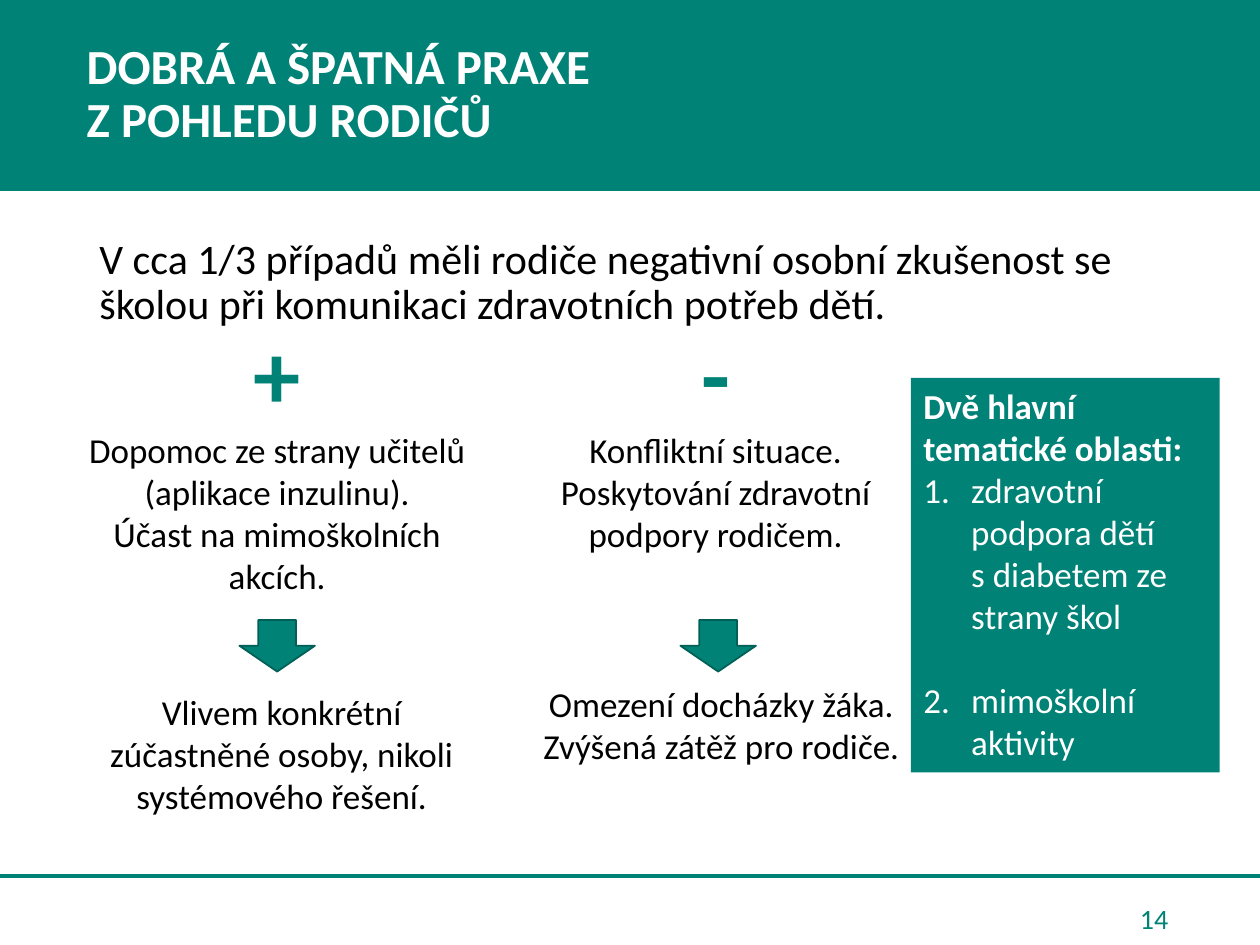
from lxml import etree
from pptx import Presentation
from pptx.dml.color import RGBColor
from pptx.enum.shapes import MSO_CONNECTOR, MSO_SHAPE
from pptx.enum.text import MSO_ANCHOR, PP_ALIGN
from pptx.oxml.ns import qn
from pptx.util import Inches, Pt

TEAL = RGBColor(0x00, 0x82, 0x76)
DARK_TEAL = RGBColor(0x00, 0x60, 0x57)
WHITE = RGBColor(0xFF, 0xFF, 0xFF)
BLACK = RGBColor(0x00, 0x00, 0x00)
FONT = "Calibri"

TITLE = "DOBRÁ A ŠPATNÁ PRAXE\vZ\u00a0POHLEDU RODIČŮ"
INTRO = ("V cca 1/3 případů měli rodiče negativní osobní zkušenost se školou "
         "při komunikaci zdravotních potřeb dětí.")
PAGE = "14"

# Each column: sign, practice, its box; arrow left; outcome and its box
COLUMNS = [
    {"sign": "+",
     "practice": ["Dopomoc ze strany učitelů", "(aplikace inzulinu).",
                  "Účast na mimoškolních akcích."],
     "practice_box": (0.55, 2.45, 3.3, 2.36),
     "arrow_left": 1.9,
     "outcome": ["Vlivem konkrétní zúčastněné osoby, nikoli systémového řešení."],
     "outcome_box": (0.54, 5.43, 3.39, 1.11)},
    {"sign": "-",
     "practice": ["Konfliktní situace.", "Poskytování zdravotní podpory rodičem."],
     "practice_box": (4.03, 2.45, 3.3, 2.02),
     "arrow_left": 5.4,
     "outcome": ["Omezení docházky žáka.", "Zvýšená zátěž pro rodiče."],
     "outcome_box": (4.03, 5.37, 3.39, 0.77)},
]
AREAS_HEADING = "Dvě hlavní tematické oblasti:"
AREAS = ["zdravotní podpora dětí s\u00a0diabetem ze strany škol", "mimoškolní aktivity"]


def style(p, size, color, bold=False, align=PP_ALIGN.LEFT):
    p.alignment = align
    for r in p.runs:
        r.font.name = FONT
        r.font.size = Pt(size)
        r.font.bold = bold
        r.font.color.rgb = color


def add_text(s, box, lines, size, color, **look):
    tf = s.shapes.add_textbox(*map(Inches, box)).text_frame
    tf.word_wrap = True
    tf.text = "\n".join(lines)
    for p in tf.paragraphs:
        style(p, size, color, **look)
    return tf


def add_block(s, preset, box, outline=None):
    sp = s.shapes.add_shape(preset, *map(Inches, box))
    sp.shadow.inherit = False
    sp.fill.solid()
    sp.fill.fore_color.rgb = TEAL
    if outline is None:
        sp.line.fill.background()
    else:
        sp.line.color.rgb = outline
        sp.line.width = Pt(1)
    return sp


def indent(p, left, first=0.0):
    pPr = p._p.get_or_add_pPr()
    pPr.set("marL", str(Inches(left)))
    pPr.set("indent", str(Inches(first)))
    return pPr


def add_frame(s):
    """Title band, footer rule and page number."""
    rule = s.shapes.add_connector(MSO_CONNECTOR.STRAIGHT, 0, Inches(6.95),
                                  Inches(10), Inches(6.95))
    rule.line.color.rgb = TEAL
    rule.line.width = Pt(2.25)
    etree.SubElement(rule._element.spPr, qn("a:effectLst"))

    add_block(s, MSO_SHAPE.RECTANGLE, (0, 0, 10, 1.51), TEAL)
    tf = add_text(s, (0, 0, 10, 1.51), [TITLE], 28, WHITE, bold=True)
    tf.vertical_anchor = MSO_ANCHOR.MIDDLE
    tf.paragraphs[0].line_spacing = 0.9
    indent(tf.paragraphs[0], 0.59)

    tf = add_text(s, (7.08, 7.09, 2.29, 0.4), [PAGE], 16, TEAL, align=PP_ALIGN.RIGHT)
    tf.vertical_anchor = MSO_ANCHOR.MIDDLE


def add_column(s, col):
    tf = add_text(s, col["practice_box"], [col["sign"], *col["practice"]], 20, BLACK,
                  align=PP_ALIGN.CENTER)
    style(tf.paragraphs[0], 54, TEAL, bold=True, align=PP_ALIGN.CENTER)
    add_block(s, MSO_SHAPE.DOWN_ARROW, (col["arrow_left"], 4.92, 0.6, 0.41), DARK_TEAL)
    add_text(s, col["outcome_box"], col["outcome"], 20, BLACK, align=PP_ALIGN.CENTER)


def add_areas(s):
    tf = add_block(s, MSO_SHAPE.RECTANGLE, (7.23, 3, 2.45, 3.13)).text_frame
    tf.word_wrap = True
    tf.vertical_anchor = MSO_ANCHOR.TOP
    tf.text = "\n".join([AREAS_HEADING, *AREAS])
    heading, *items = tf.paragraphs
    style(heading, 20, WHITE, bold=True)
    for p in items:
        pPr = indent(p, 0.38, -0.38)
        etree.SubElement(pPr, qn("a:buFont"), typeface="+mj-lt")
        etree.SubElement(pPr, qn("a:buAutoNum"), type="arabicPeriod")
        style(p, 20, WHITE)
    items[-1].space_before = Pt(24)


def main():
    prs = Presentation()
    prs.slide_width, prs.slide_height = Inches(10), Inches(7.5)
    s = prs.slides.add_slide(prs.slide_layouts[6])
    add_frame(s)
    intro = add_text(s, (0.69, 1.84, 8.69, 0.8), [INTRO], 24, BLACK)
    intro.paragraphs[0].line_spacing = 0.9
    for col in COLUMNS:
        add_column(s, col)
    add_areas(s)
    prs.save("out.pptx")


if __name__ == "__main__":
    main()
